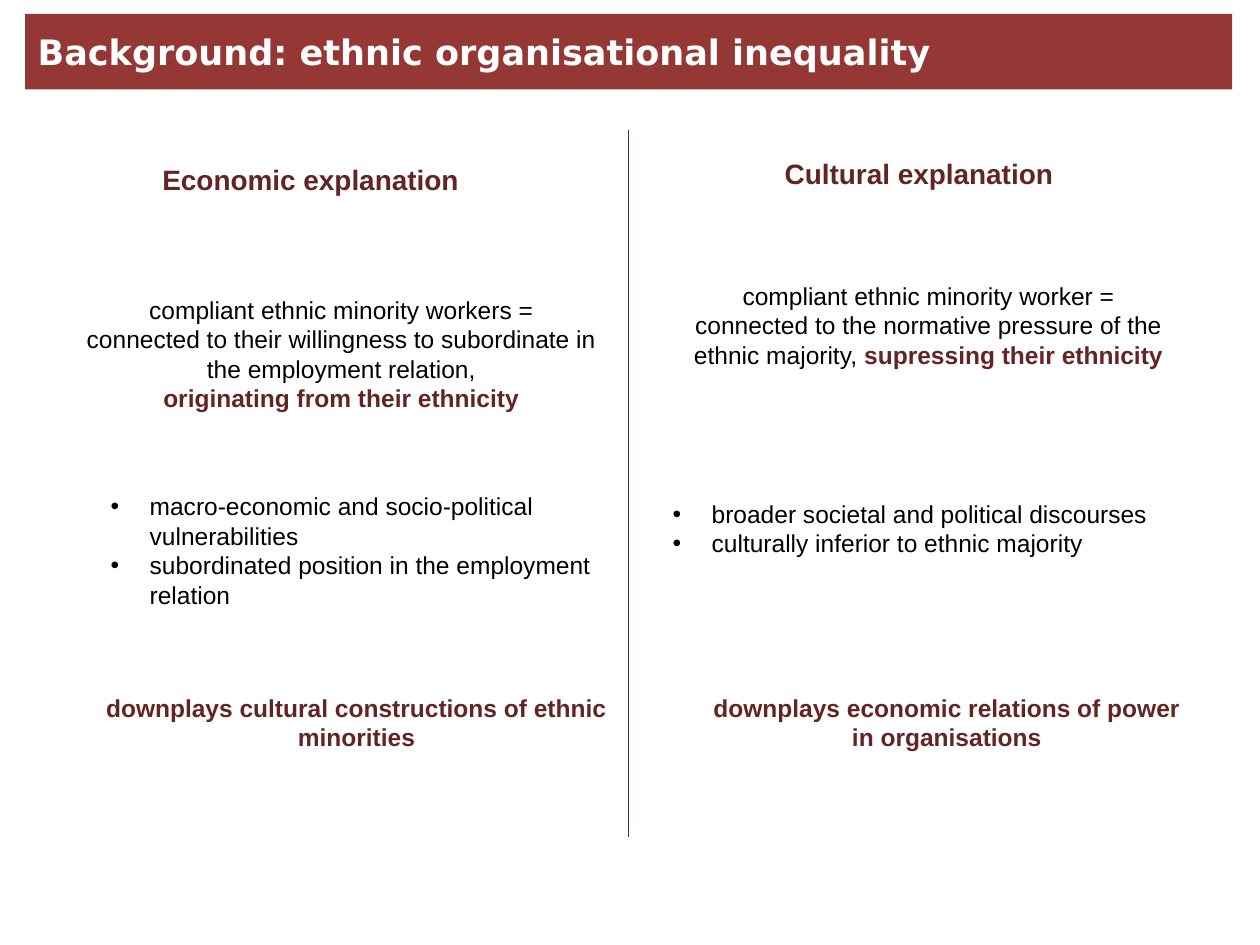
from lxml import etree
from pptx import Presentation
from pptx import util as u
from pptx.dml.color import RGBColor
from pptx.enum import shapes, text
from pptx.oxml.ns import qn

COLORS = {"banner": "953735", "accent": "632523", "body": "000000", "white": "FFFFFF"}
FORMATS = {
    "title": {"name": "DejaVu Sans", "size": u.Pt(20), "bold": True, "color": "white"},
    "heading": {"name": "Arial", "size": u.Pt(16), "bold": True, "color": "accent"},
    "body": {"name": "Arial", "size": u.Pt(14), "bold": False, "color": "body"},
    "strong": {"name": "Arial", "size": u.Pt(14), "bold": True, "color": "accent"},
}
LEFT, CENTER = text.PP_ALIGN.LEFT, text.PP_ALIGN.CENTER
INDENT = u.Inches(0.31)


class SlideBuilder:
    def __init__(self, slide):
        self.slide = slide

    def color(self, name):
        return RGBColor.from_string(COLORS[name])

    def fill_text(self, frame, paragraphs, align, bullets=False):
        for index, runs in enumerate(paragraphs):
            paragraph = frame.paragraphs[0] if index == 0 else frame.add_paragraph()
            paragraph.alignment = align
            if bullets:
                properties = paragraph._p.get_or_add_pPr()
                properties.set("marL", str(int(INDENT)))
                properties.set("indent", str(-int(INDENT)))
                font = etree.SubElement(properties, qn("a:buFont"))
                font.set("typeface", "Arial")
                etree.SubElement(properties, qn("a:buChar")).set("char", "•")
            for words, style in runs:
                run = paragraph.add_run()
                run.text = words
                for key, value in FORMATS[style].items():
                    if key == "color":
                        run.font.color.rgb = self.color(value)
                    else:
                        setattr(run.font, key, value)

    def banner(self, box, words):
        shape = self.slide.shapes.add_shape(
            shapes.MSO_SHAPE.RECTANGLE, *map(u.Inches, box))
        shape.shadow.inherit = False
        shape.fill.solid()
        shape.fill.fore_color.rgb = self.color("banner")
        shape.line.fill.background()
        shape.text_frame.vertical_anchor = text.MSO_ANCHOR.MIDDLE
        self.fill_text(shape.text_frame, [[(words, "title")]], LEFT)

    def text_box(self, box, paragraphs, align=CENTER, wrap=True, bullets=False):
        shape = self.slide.shapes.add_textbox(*map(u.Inches, box))
        shape.text_frame.word_wrap = wrap
        self.fill_text(shape.text_frame, paragraphs, align, bullets)

    def heading(self, box, words):
        self.text_box(box, [[(words, "heading")]], LEFT, wrap=False)

    def bullet_list(self, box, items):
        self.text_box(box, [[(item, "body")] for item in items], LEFT, bullets=True)

    def conclusion(self, box, words):
        self.text_box(box, [[(words, "strong")]])

    def divider(self, x, top, bottom):
        line = self.slide.shapes.add_connector(
            shapes.MSO_CONNECTOR.STRAIGHT, *map(u.Inches, (x, top, x, bottom)))
        line.line.color.rgb = self.color("accent")
        line.line.width = u.Pt(0.75)
        etree.SubElement(line._element.spPr, qn("a:effectLst"))


def main():
    presentation = Presentation()
    presentation.slide_width = u.Inches(10)
    presentation.slide_height = u.Inches(7.5)
    builder = SlideBuilder(presentation.slides.add_slide(presentation.slide_layouts[6]))

    builder.banner((0.2, 0.11, 9.58, 0.6), "Background: ethnic organisational inequality")

    builder.heading((1.19, 1.24, 2.58, 0.37), "Economic explanation")
    builder.text_box((0.58, 2.29, 4.26, 1.04), [
        [("compliant ethnic minority workers =", "body")],
        [("connected to their willingness to subordinate in the employment relation,", "body")],
        [("originating from their ethnicity", "strong")],
    ])
    builder.bullet_list((0.78, 3.85, 4.13, 1.04), [
        "macro-economic and socio-political vulnerabilities",
        "subordinated position in the employment relation",
    ])
    builder.conclusion((0.58, 5.45, 4.5, 0.57),
                       "downplays cultural constructions of ethnic minorities")

    builder.heading((6.13, 1.19, 2.36, 0.37), "Cultural explanation")
    builder.text_box((5.21, 2.18, 4.32, 0.81), [
        [("compliant ethnic minority worker =", "body")],
        [("connected to the normative pressure of the ethnic majority, ", "body"),
         ("supressing their ethnicity", "strong")],
    ])
    builder.bullet_list((5.24, 3.91, 4.14, 0.91), [
        "broader societal and political discourses",
        "culturally inferior to ethnic majority",
    ])
    builder.conclusion((5.5, 5.45, 4.03, 0.57),
                       "downplays economic relations of power in organisations")

    builder.divider(4.99, 1.03, 6.64)
    presentation.save("out.pptx")


if __name__ == "__main__":
    main()
